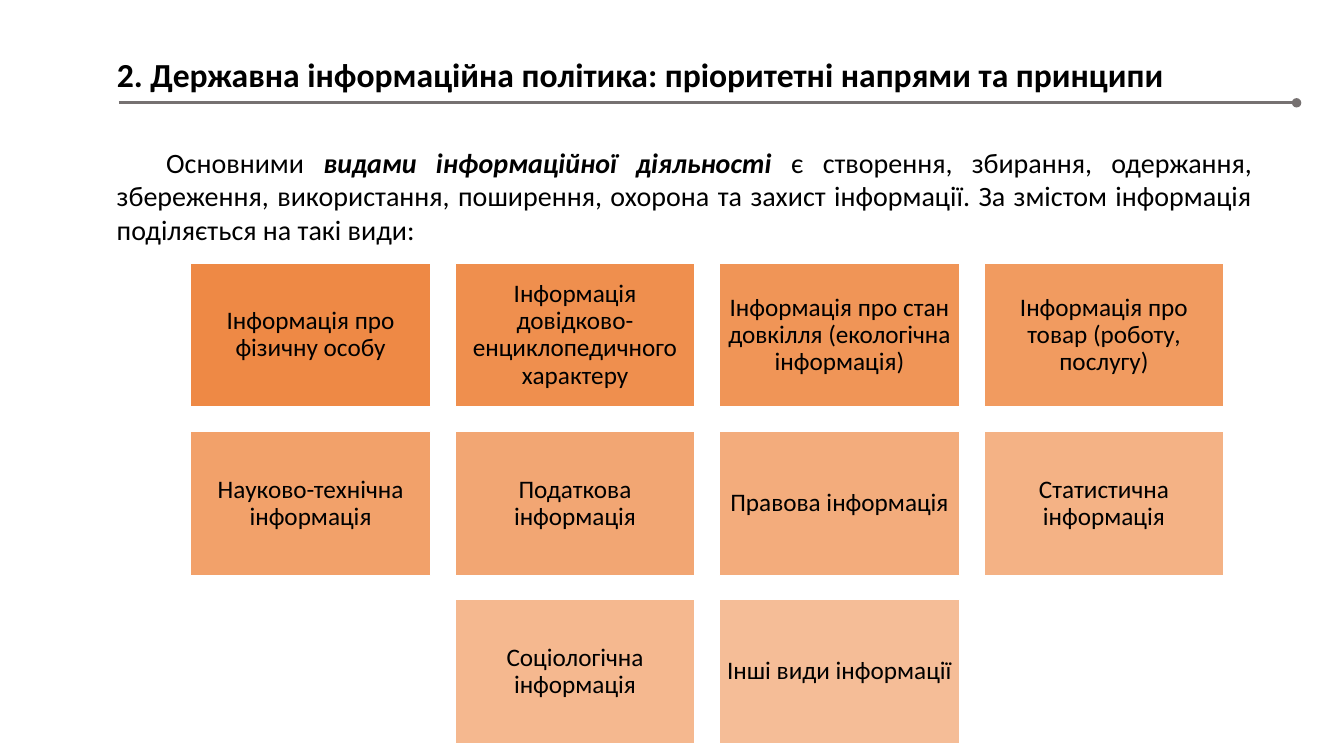
from dataclasses import dataclass

import pptx
import pptx.dml.color
import pptx.enum.shapes
import pptx.enum.text
import pptx.util
from lxml import etree
from pptx.oxml.ns import qn
from pptx.util import Inches

ALIGN = pptx.enum.text.PP_ALIGN
ANCHOR = pptx.enum.text.MSO_ANCHOR


@dataclass(frozen=True)
class Theme:
    font: str = "Calibri"
    text: str = "000000"
    tile: str = "ED7D31"
    tile_border: str = "FFFFFF"
    rule: str = "767171"
    title_size: int = 24
    body_size: int = 20
    tile_size: int = 18


THEME = Theme()

TITLE = "2. Державна інформаційна політика: пріоритетні напрями та принципи"
INTRO = [
    ("Основними ", False),
    ("видами інформаційної діяльності", True),
    (" є створення, збирання, одержання, збереження, використання, поширення, "
     "охорона та захист інформації. За змістом інформація поділяється на такі види:", False),
]
INFORMATION_KINDS = [
    "Інформація про фізичну особу",
    "Інформація довідково-енциклопедичного характеру",
    "Інформація про стан довкілля (екологічна інформація)",
    "Інформація про товар (роботу, послугу)",
    "Науково-технічна інформація",
    "Податкова інформація",
    "Правова інформація",
    "Статистична інформація",
    "Соціологічна інформація",
    "Інші види інформації",
]
COLUMNS = 4
GRID_LEFT, GRID_TOP = 1.89, 2.61
TILE_WIDTH, TILE_HEIGHT = 2.38, 1.43
COLUMN_STEP, ROW_STEP = 2.623, 1.67
FIRST_OPACITY, LAST_OPACITY = 90, 50


def rgb(code):
    return pptx.dml.color.RGBColor.from_string(code)


def write_text(frame, runs, *, size, bold=False, align=ALIGN.LEFT, anchor=ANCHOR.TOP,
               inset=None, indent=None, line_spacing=None):
    """Fill a frame with one paragraph of (text, emphasised) runs."""
    frame.word_wrap = True
    frame.vertical_anchor = anchor
    if inset is not None:
        frame.margin_left = frame.margin_right = Inches(inset)
        frame.margin_top = frame.margin_bottom = Inches(inset)
    paragraph = frame.paragraphs[0]
    paragraph.alignment = align
    if line_spacing is not None:
        paragraph.line_spacing = line_spacing
    if indent is not None:
        paragraph._p.get_or_add_pPr().set("indent", str(Inches(indent)))
    for text, emphasised in runs:
        run = paragraph.add_run()
        run.text = text
        run.font.name = THEME.font
        run.font.size = pptx.util.Pt(size)
        run.font.color.rgb = rgb(THEME.text)
        run.font.bold = bold or emphasised
        run.font.italic = emphasised


def add_text(slide, left, top, width, height, runs, **text_format):
    box = slide.shapes.add_textbox(Inches(left), Inches(top), Inches(width), Inches(height))
    write_text(box.text_frame, runs, **text_format)


def add_title_rule(slide, left, right, y):
    rule = slide.shapes.add_connector(
        pptx.enum.shapes.MSO_CONNECTOR.STRAIGHT,
        Inches(left), Inches(y), Inches(right), Inches(y))
    rule.line.color.rgb = rgb(THEME.rule)
    rule.line.width = pptx.util.Pt(2.25)
    etree.SubElement(rule.line._get_or_add_ln(), qn("a:tailEnd"), type="oval")
    etree.SubElement(rule._element.spPr, qn("a:effectLst"))


def add_tile(slide, left, top, label, opacity):
    tile = slide.shapes.add_shape(
        pptx.enum.shapes.MSO_SHAPE.RECTANGLE,
        Inches(left), Inches(top), Inches(TILE_WIDTH), Inches(TILE_HEIGHT))
    tile.shadow.inherit = False
    tile.fill.solid()
    tile.fill.fore_color.rgb = rgb(THEME.tile)
    color = tile._element.spPr.find(qn("a:solidFill")).find(qn("a:srgbClr"))
    etree.SubElement(color, qn("a:alpha"), val=str(round(opacity * 1000)))
    tile.line.color.rgb = rgb(THEME.tile_border)
    tile.line.width = pptx.util.Pt(1)
    write_text(tile.text_frame, [(label, False)], size=THEME.tile_size, align=ALIGN.CENTER,
               anchor=ANCHOR.MIDDLE, inset=0.07, line_spacing=0.9)


def add_tile_grid(slide, labels):
    """Lay tiles out in rows, centring a short last row and fading from first to last."""
    fade = (FIRST_OPACITY - LAST_OPACITY) / (len(labels) - 1)
    for index, label in enumerate(labels):
        row, column = divmod(index, COLUMNS)
        tiles_in_row = min(COLUMNS, len(labels) - row * COLUMNS)
        column += (COLUMNS - tiles_in_row) / 2
        add_tile(slide, GRID_LEFT + column * COLUMN_STEP, GRID_TOP + row * ROW_STEP,
                 label, FIRST_OPACITY - index * fade)


def main():
    deck = pptx.Presentation()
    deck.slide_width, deck.slide_height = Inches(13.33), Inches(7.5)
    slide = deck.slides.add_slide(deck.slide_layouts[6])
    add_text(slide, 1.06, 0.49, 11.62, 0.5, [(TITLE, False)], size=THEME.title_size, bold=True)
    add_text(slide, 1.06, 1.39, 11.46, 1.11, INTRO, size=THEME.body_size,
             align=ALIGN.JUSTIFY, indent=0.49)
    add_title_rule(slide, 1.18, 12.86, 1.02)
    add_tile_grid(slide, INFORMATION_KINDS)
    deck.save("out.pptx")


if __name__ == "__main__":
    main()
